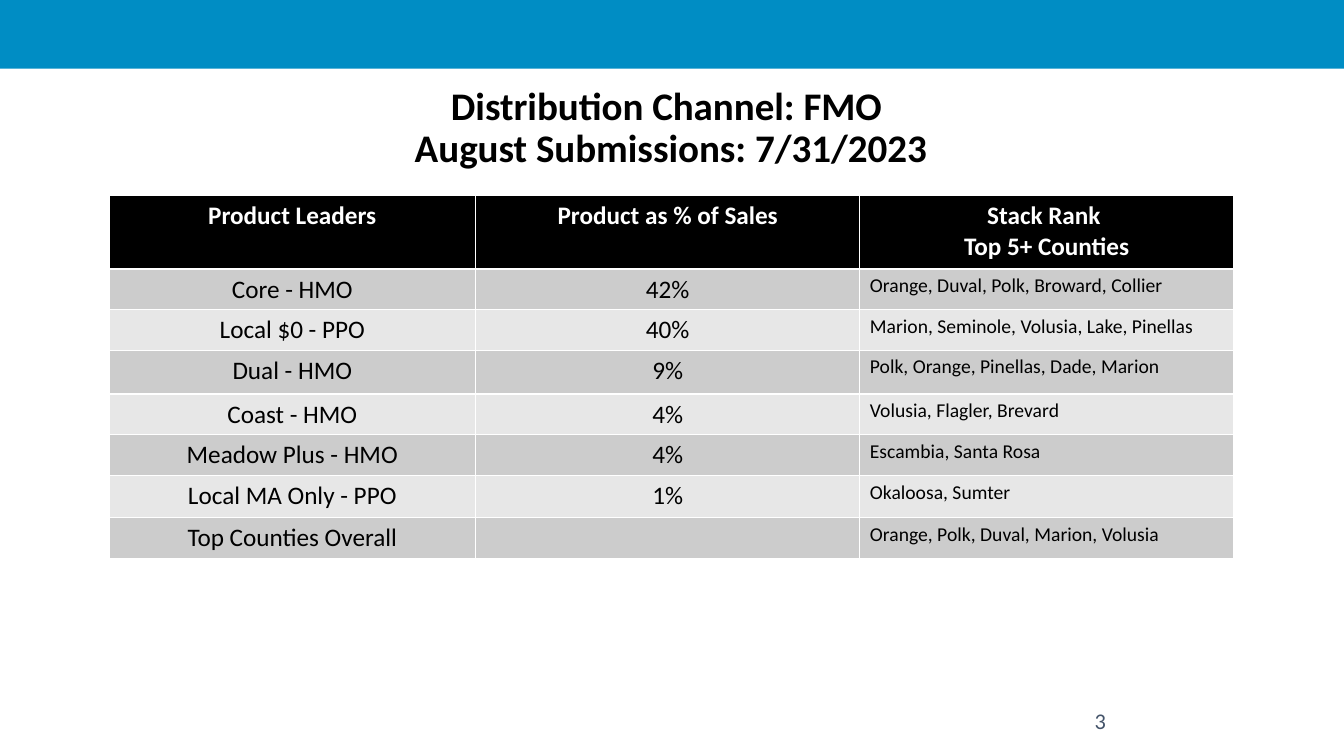
from pptx import Presentation
from pptx.dml.color import RGBColor
from pptx.enum.shapes import MSO_SHAPE
from pptx.enum.text import MSO_ANCHOR, PP_ALIGN
from pptx.util import Pt

CENTER, LEFT = PP_ALIGN.CENTER, PP_ALIGN.LEFT
BOTTOM, MIDDLE = MSO_ANCHOR.BOTTOM, MSO_ANCHOR.MIDDLE
RECTANGLE = MSO_SHAPE.RECTANGLE
FONT = "Calibri"
COLORS = {
    "banner": "008DC4", "black": "000000", "white": "FFFFFF",
    "slate": "44546A", "dark band": "CCCCCC", "light band": "E7E7E7",
}


def style_text(frame, size, color, bold=False, align=CENTER):
    for paragraph in frame.paragraphs:
        paragraph.alignment = align
        for span in paragraph.runs:
            span.font.name = FONT
            span.font.size = Pt(size)
            span.font.bold = bold
            span.font.color.rgb = RGBColor.from_string(COLORS[color])


def add_text(page, text, left, top, width, height, anchor):
    box = page.shapes.add_textbox(Pt(left), Pt(top), Pt(width), Pt(height))
    frame = box.text_frame
    frame.word_wrap = True
    frame.vertical_anchor = anchor
    frame.text = text
    return frame


deck = Presentation()
deck.slide_width, deck.slide_height = Pt(960), Pt(540)
page = deck.slides.add_slide(deck.slide_layouts[6])

# Top banner
banner = page.shapes.add_shape(RECTANGLE, 0, 0, deck.slide_width, Pt(49))
banner.shadow.inherit = False
banner.fill.solid()
banner.fill.fore_color.rgb = RGBColor.from_string(COLORS["banner"])
banner.line.fill.background()

# Title
title = add_text(page, "Distribution Channel: FMO \vAugust Submissions: 7/31/2023",
                 77.8, 57.6, 802.8, 68.4, BOTTOM)
title.paragraphs[0].line_spacing = 0.9
style_text(title, 27.9, "black", bold=True)

# Product table
rows = [
    ("Product Leaders", "Product as % of Sales", "Stack Rank \nTop 5+ Counties"),
    ("Core - HMO", "42%", "Orange, Duval, Polk, Broward, Collier"),
    ("Local $0 - PPO", "40%", "Marion, Seminole, Volusia, Lake, Pinellas"),
    ("Dual - HMO", "9%", "Polk, Orange, Pinellas, Dade, Marion"),
    ("Coast - HMO", "4%", "Volusia, Flagler, Brevard"),
    ("Meadow Plus - HMO", "4%", "Escambia, Santa Rosa"),
    ("Local MA Only - PPO", "1%", "Okaloosa, Sumter"),
    ("Top Counties Overall", "", "Orange, Polk, Duval, Marion, Volusia"),
]
column_widths = [262, 274.4, 267]
row_heights = [52.4, 28.8, 29.2, 31.2, 29.2, 29.2, 30, 29.2]
table = page.shapes.add_table(
    len(rows), len(column_widths), Pt(77.8), Pt(139.8),
    Pt(sum(column_widths)), Pt(sum(row_heights))).table
for column, width in zip(table.columns, column_widths):
    column.width = Pt(width)

for r, values in enumerate(rows):
    table.rows[r].height = Pt(row_heights[r])
    header = r == 0
    band = "black" if header else "dark band" if r % 2 else "light band"
    for c, value in enumerate(values):
        cell = table.cell(r, c)
        cell.fill.solid()
        cell.fill.fore_color.rgb = RGBColor.from_string(COLORS[band])
        cell.text_frame.text = value
        if header:
            style_text(cell.text_frame, 18, "white", bold=True)
        elif c == 2:
            style_text(cell.text_frame, 14, "black", align=LEFT)
        else:
            style_text(cell.text_frame, 18, "black")

# Page number
number = add_text(page, "3", 678, 500.4, 216, 28.8, MIDDLE)
number.paragraphs[0].space_after = Pt(6)
style_text(number, 16, "slate")

deck.save("out.pptx")
